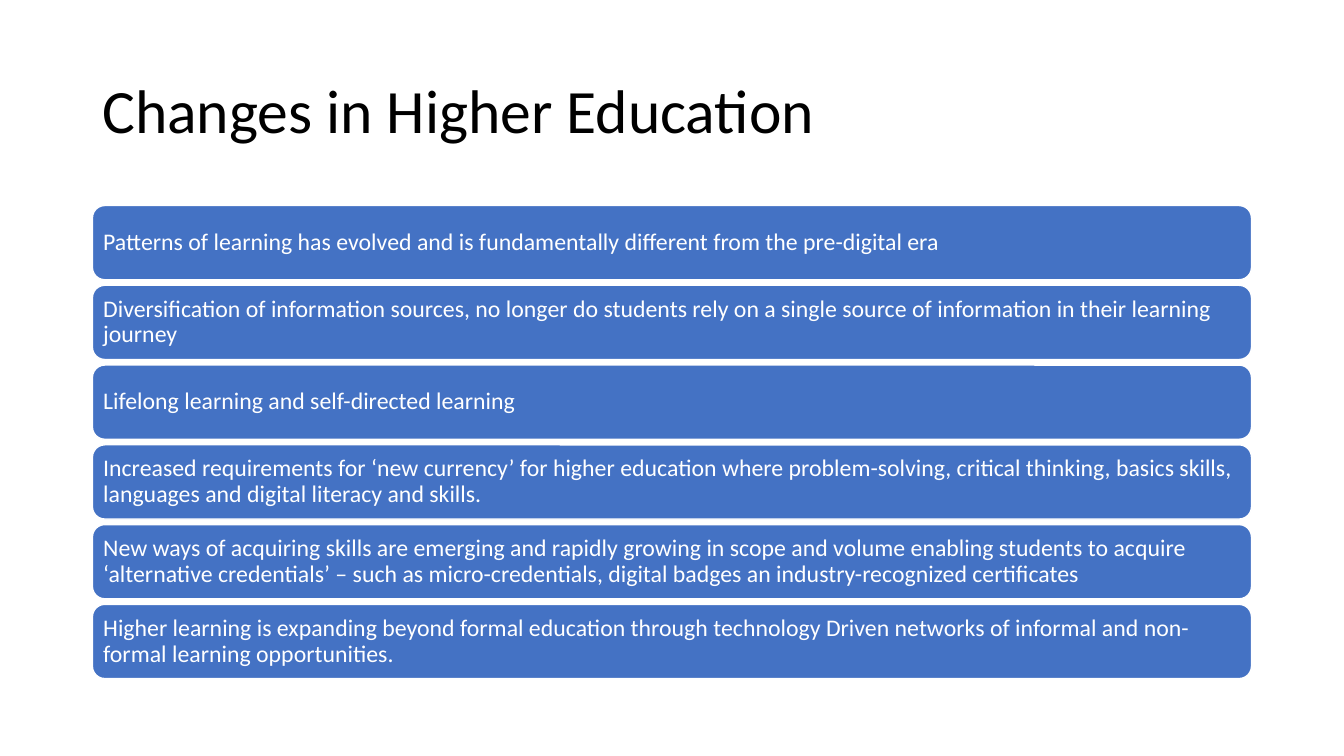
import pptx
import pptx.util
import pptx.dml.color
import pptx.enum.shapes
import pptx.enum.text
from pptx.util import Cm, Pt

HUES = {"ink": "000000", "bar": "4472C4", "paper": "FFFFFF"}
LEFT, WIDTH = Cm(2.33), Cm(29.21)
TOP, HIGH, STEP = 5.18, 1.87, 2.01

POINTS = [
    "Patterns of learning has evolved and is fundamentally different from the pre-digital era",
    "Diversification of information sources, no longer do students rely on a single source "
    "of information in their learning journey",
    "Lifelong learning and self-directed learning",
    "Increased requirements for ‘new currency’ for higher education where problem-solving, "
    "critical thinking, basics skills, languages and digital literacy and skills.",
    "New ways of acquiring skills are emerging and rapidly growing in scope and volume "
    "enabling students to acquire ‘alternative credentials’ – such as micro-credentials, "
    "digital badges an industry-recognized certificates",
    "Higher learning is expanding beyond formal education through technology Driven networks "
    "of informal and non-formal learning opportunities.",
]


def hue(name):
    return pptx.dml.color.RGBColor.from_string(HUES[name])


def write(shape, text, size, color, pad_x, pad_y):
    """Set left-aligned, vertically centred text in the shape."""
    frame = shape.text_frame
    frame.word_wrap = True
    frame.vertical_anchor = pptx.enum.text.MSO_ANCHOR.MIDDLE
    frame.margin_left = frame.margin_right = Cm(pad_x)
    frame.margin_top = frame.margin_bottom = Cm(pad_y)
    para = frame.paragraphs[0]
    para.text = text
    para.alignment = pptx.enum.text.PP_ALIGN.LEFT
    para.line_spacing = 0.9
    para.font.name = "Calibri"
    para.font.size = Pt(size)
    para.font.color.rgb = hue(color)


deck = pptx.Presentation()
deck.slide_width, deck.slide_height = Cm(33.87), Cm(19.05)
slide = deck.slides.add_slide(deck.slide_layouts[6])

title = slide.shapes.add_textbox(LEFT, Cm(1.01), WIDTH, Cm(3.68))
write(title, "Changes in Higher Education", size=44, color="ink", pad_x=0.25, pad_y=0.13)

for i, point in enumerate(POINTS):
    bar = slide.shapes.add_shape(
        pptx.enum.shapes.MSO_SHAPE.ROUNDED_RECTANGLE,
        LEFT, Cm(TOP + i * STEP), WIDTH, Cm(HIGH))
    bar.shadow.inherit = False
    bar.fill.solid()
    bar.fill.fore_color.rgb = hue("bar")
    bar.line.color.rgb = hue("paper")
    bar.line.width = Pt(1)
    write(bar, point, size=17, color="paper", pad_x=0.18, pad_y=0.18)

deck.save("out.pptx")
